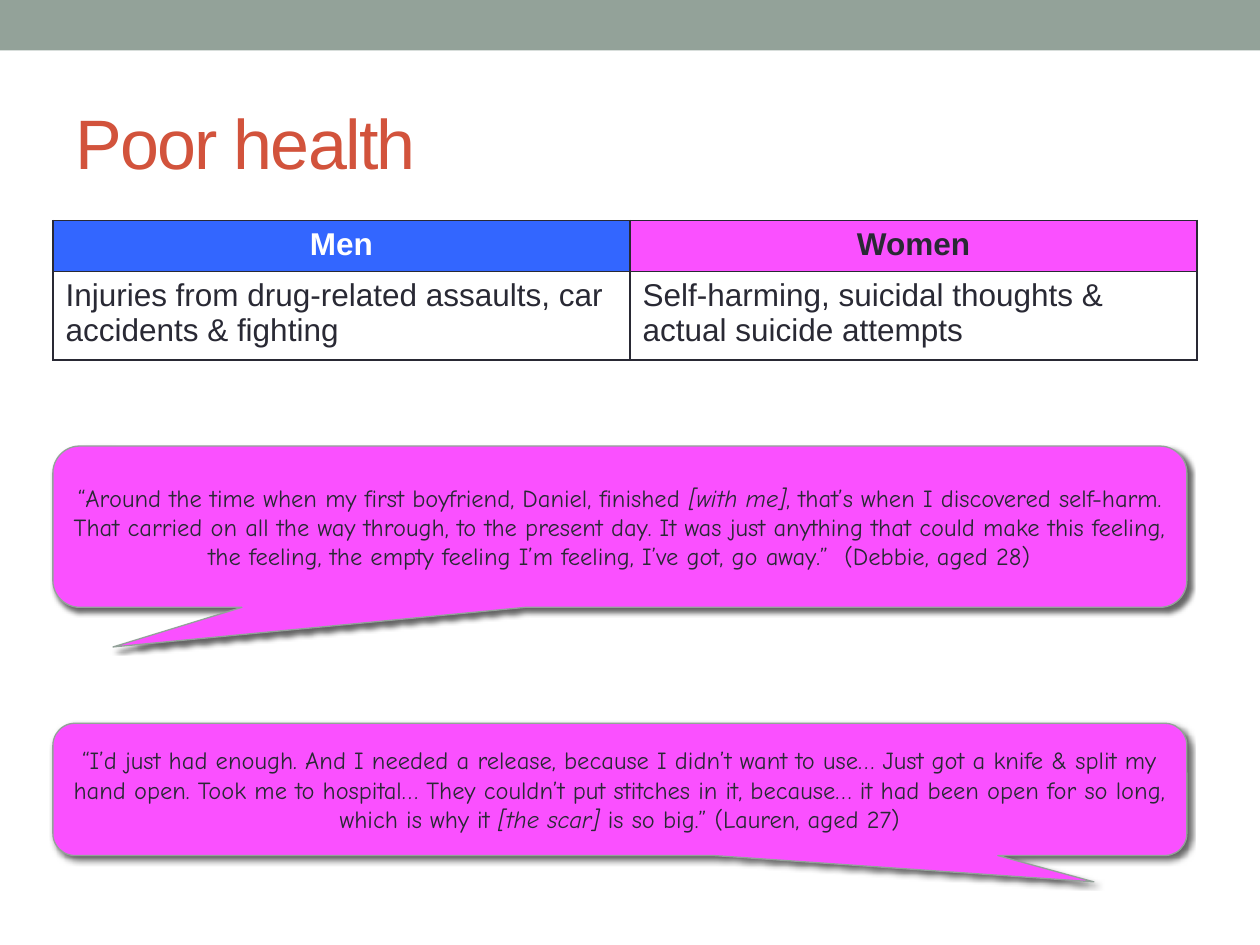
from lxml import etree
from pptx import Presentation
from pptx.dml.color import RGBColor
from pptx.enum.shapes import MSO_SHAPE
from pptx.enum.text import MSO_ANCHOR, PP_ALIGN
from pptx.oxml import parse_xml
from pptx.oxml.ns import nsdecls, qn
from pptx.util import Pt

RECTANGLE = MSO_SHAPE.RECTANGLE
CALLOUT = MSO_SHAPE.ROUNDED_RECTANGULAR_CALLOUT
MIDDLE = MSO_ANCHOR.MIDDLE
CENTER, LEFT = PP_ALIGN.CENTER, PP_ALIGN.LEFT

COLORS = {
    "sage": "93A299",
    "red": "D2533C",
    "ink": "292934",
    "white": "FFFFFF",
    "blue": "3366FF",
    "pink": "FA50FF",
    "black": "000000",
}


def color(name):
    return RGBColor.from_string(COLORS[name])


def style(span, size, name, font="Arial", bold=False, italic=False):
    span.font.size = Pt(size)
    span.font.name = font
    span.font.bold = bold
    span.font.italic = italic
    span.font.color.rgb = color(name)


deck = Presentation()
deck.slide_width, deck.slide_height = Pt(720), Pt(540)
page = deck.slides.add_slide(deck.slide_layouts[6])

band = page.shapes.add_shape(RECTANGLE, 0, 0, Pt(720), Pt(28.8))
band.shadow.inherit = False
band.fill.solid()
band.fill.fore_color.rgb = color("sage")
band.line.fill.background()

title = page.shapes.add_textbox(Pt(36), Pt(42), Pt(648), Pt(78))
title.text_frame.word_wrap = True
title.text_frame.vertical_anchor = MIDDLE
title.text_frame.text = "Poor health"
span = title.text_frame.paragraphs[0].runs[0]
style(span, 40, "red")
span.font._element.set("spc", "-100")

cells = [
    [("Men", "white", "blue"), ("Women", "ink", "pink")],
    [
        ("Injuries from drug-related assaults, car accidents & fighting", "ink", None),
        ("Self-harming, suicidal thoughts & actual suicide attempts", "ink", None),
    ],
]
table = page.shapes.add_table(2, 2, Pt(30.24), Pt(126), Pt(653.76), Pt(77)).table
for column, width in zip(table.columns, (329.76, 324)):
    column.width = Pt(width)
for row, height in zip(table.rows, (29.2, 47.8)):
    row.height = Pt(height)
for row_index, row in enumerate(cells):
    for column_index, (text, ink, fill) in enumerate(row):
        header = row_index == 0
        cell = table.cell(row_index, column_index)
        cell.text_frame.text = text
        para = cell.text_frame.paragraphs[0]
        para.alignment = CENTER if header else LEFT
        style(para.runs[0], 18, ink, bold=header)
        if fill:
            cell.fill.solid()
            cell.fill.fore_color.rgb = color(fill)
        else:
            cell.fill.background()
        properties = cell._tc.get_or_add_tcPr()
        for index, side in enumerate(("lnL", "lnR", "lnT", "lnB")):
            properties.insert(index, parse_xml(
                f'<a:{side} {nsdecls("a")} w="12700"><a:solidFill>'
                f'<a:srgbClr val="{COLORS["ink"]}"/></a:solidFill></a:{side}>'
            ))

quotes = [
    (254.88, 92.16, (-0.447, 0.746, 0.167), (
        "“Around the time when my first boyfriend, Daniel, finished ",
        "[with me]",
        ", that’s when I discovered self-harm. That carried on all the way through, "
        "to the present day. It was just anything that could make this feeling, "
        "the feeling, the empty feeling I’m feeling, I’ve got, go away.”  (Debbie, aged 28)",
    )),
    (413.28, 75.6, (0.418, 0.699, 0.167), (
        "“I’d just had enough. And I needed a release, because I didn’t want to use… "
        "Just got a knife & split my hand open. Took me to hospital… They couldn’t put "
        "stitches in it, because… it had been open for so long, which is why it ",
        "[the scar]",
        " is so big.” (Lauren, aged 27)",
    )),
]
for top, height, adjustments, parts in quotes:
    bubble = page.shapes.add_shape(CALLOUT, Pt(30.24), Pt(top), Pt(648), Pt(height))
    for index, value in enumerate(adjustments):
        bubble.adjustments[index] = value
    bubble.fill.solid()
    bubble.fill.fore_color.rgb = color("pink")
    bubble.line.color.rgb = color("sage")
    bubble.line.width = Pt(0.75)
    bubble.shadow.inherit = False
    effects = bubble._element.spPr.find(qn("a:effectLst"))
    shadow = etree.SubElement(
        effects, qn("a:outerShdw"), blurRad=str(Pt(3)), dist=str(Pt(2)),
        dir="2700000", algn="tl", rotWithShape="0",
    )
    shade = etree.SubElement(shadow, qn("a:srgbClr"), val=COLORS["black"])
    etree.SubElement(shade, qn("a:alpha"), val="60000")
    bubble.text_frame.word_wrap = True
    bubble.text_frame.vertical_anchor = MIDDLE
    para = bubble.text_frame.paragraphs[0]
    para.alignment = CENTER
    for index, part in enumerate(parts):
        span = para.add_run()
        span.text = part
        style(span, 14, "ink", font="Comic Neue", italic=index == 1)

deck.save("out.pptx")
